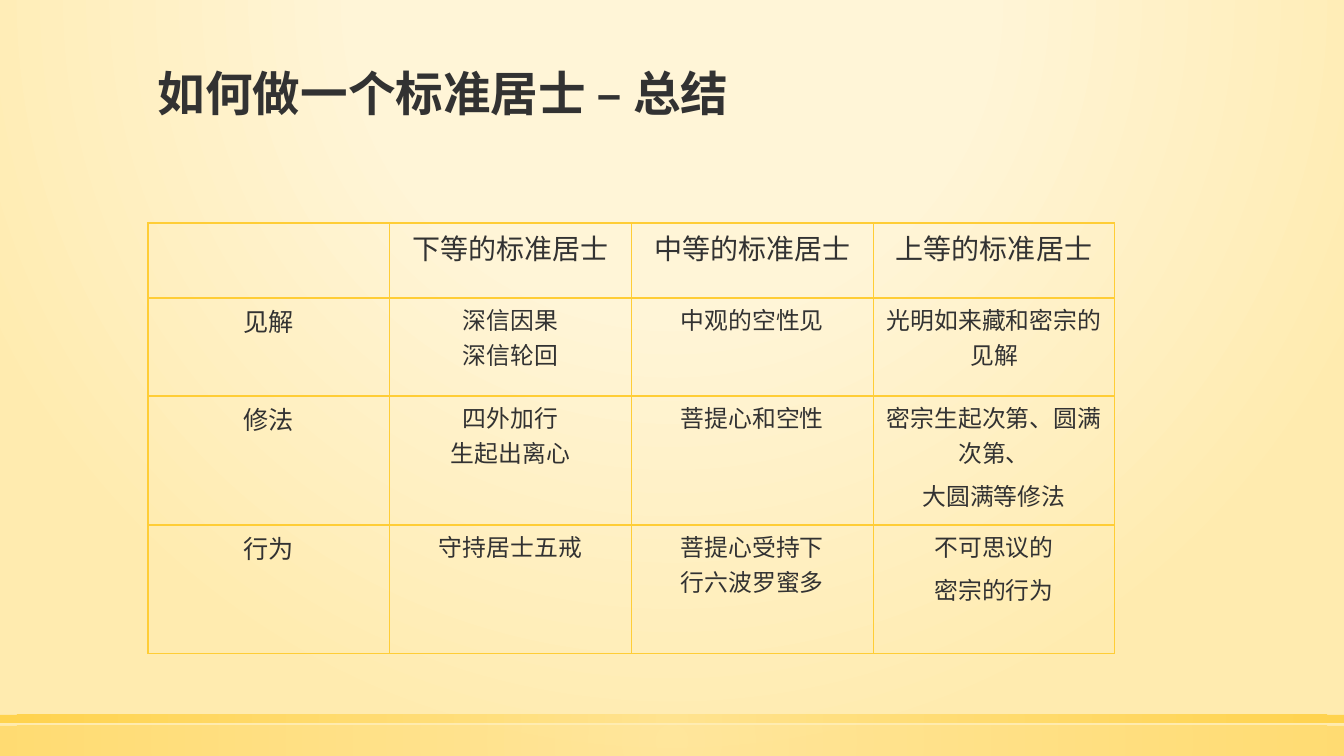
from lxml import etree
from pptx import Presentation
from pptx.dml.color import RGBColor
from pptx.enum.shapes import MSO_SHAPE
from pptx.enum.text import MSO_ANCHOR, PP_ALIGN
from pptx.oxml import parse_xml
from pptx.oxml.ns import nsdecls, qn
from pptx.util import Pt

RECT = MSO_SHAPE.RECTANGLE
BOTTOM = MSO_ANCHOR.BOTTOM
CENTER = PP_ALIGN.CENTER
PX = 914400 / 100.8
WIDE, HIGH = 1344, 756
FONT = "Noto Sans CJK SC"
COLORS = {
    "text": "323232",
    "gold": "FFCD36",
    "light": "FFE186",
    "cream": "FFF5D7",
    "sand": "FFEBAF",
}
ROWS = [
    ["", "下等的标准居士", "中等的标准居士", "上等的标准居士"],
    ["见解", "深信因果\n深信轮回", "中观的空性见", "光明如来藏和密宗的见解"],
    ["修法", "四外加行\n生起出离心", "菩提心和空性", "密宗生起次第、圆满次第、\n大圆满等修法"],
    ["行为", "守持居士五戒", "菩提心受持下\n行六波罗蜜多", "不可思议的\n密宗的行为"],
]
HEIGHTS = [75, 98, 129, 129]


def px(n):
    return round(n * PX)


class Deck:
    def __init__(self):
        self.prs = Presentation()
        self.prs.slide_width, self.prs.slide_height = px(WIDE), px(HIGH)
        self.slide = self.prs.slides.add_slide(self.prs.slide_layouts[6])

    def glow(self, item, stops, focus):
        """Swap the solid fill of a slide or shape for a round gradient."""
        marks = "".join(
            f'<a:gs pos="{pos * 1000}"><a:srgbClr val="{COLORS[name]}">'
            f'<a:alpha val="{alpha * 1000}"/></a:srgbClr></a:gs>'
            for pos, name, alpha in stops)
        edges = " ".join(f'{side}="{n * 1000}"' for side, n in zip("ltrb", focus))
        grad = parse_xml(
            f'<a:gradFill {nsdecls("a")} rotWithShape="1"><a:gsLst>{marks}</a:gsLst>'
            f'<a:path path="circle"><a:fillToRect {edges}/></a:path></a:gradFill>')
        solid = item._element.xpath(".//a:solidFill")[0]
        solid.getparent().replace(solid, grad)

    def back(self):
        self.slide.background.fill.solid()
        stops = [(0, "cream", 100), (40, "cream", 100), (100, "sand", 100)]
        self.glow(self.slide, stops, (50, -80, 50, 180))

    def bar(self, top, height, alpha):
        shape = self.slide.shapes.add_shape(RECT, 0, px(top), px(WIDE), px(height))
        shape.shadow.inherit = False
        shape.fill.solid()
        shape.line.fill.background()
        self.glow(shape, [(0, "light", alpha), (100, "gold", alpha)], (50,) * 4)

    def style(self, par, size, bold=False):
        for run in par.runs:
            font = run.font
            font.name, font.size, font.bold = FONT, Pt(size), bold
            font.color.rgb = RGBColor.from_string(COLORS["text"])
            etree.SubElement(run._r.get_or_add_rPr(), qn("a:ea"), typeface=FONT)

    def title(self, text, *box):
        frame = self.slide.shapes.add_textbox(*map(px, box)).text_frame
        frame.word_wrap = True
        frame.vertical_anchor = BOTTOM
        frame.text = text
        par = frame.paragraphs[0]
        par.line_spacing = 0.9
        self.style(par, 34, True)

    def edge(self, cell):
        """Draw the four cell borders, which precede the fill in the XML."""
        props = cell._tc.get_or_add_tcPr()
        for spot, side in enumerate("LRTB"):
            props.insert(spot, parse_xml(
                f'<a:ln{side} {nsdecls("a")} w="12700"><a:solidFill>'
                f'<a:srgbClr val="{COLORS["gold"]}"/></a:solidFill></a:ln{side}>'))

    def cell(self, cell, text, size, after):
        cell.fill.background()
        self.edge(cell)
        cell.margin_left = cell.margin_right = px(4)
        cell.margin_top = cell.margin_bottom = px(4)
        cell.text_frame.text = text
        for par in cell.text_frame.paragraphs:
            par.alignment = CENTER
            par.space_after = Pt(after)
            self.style(par, size)

    def table(self, rows, heights, left, top, width):
        cols = len(rows[0])
        table = self.slide.shapes.add_table(
            len(rows), cols, px(left), px(top), px(width), px(sum(heights))).table
        table.first_row = table.horz_banding = False
        for r, (row, height) in enumerate(zip(rows, heights)):
            table.rows[r].height = px(height)
            for c, text in enumerate(row):
                size = 20 if r == 0 else 18 if c == 0 else 17
                after = 6 if r == 0 or c == cols - 1 else 0
                self.cell(table.cell(r, c), text, size, after)


def main():
    deck = Deck()
    deck.back()
    deck.bar(726, 30, 50)
    deck.bar(715, 8, 80)
    deck.title("如何做一个标准居士 – 总结", 148, 51, 1048, 76)
    deck.table(ROWS, HEIGHTS, 148, 223, 967)
    deck.prs.save("out.pptx")


if __name__ == "__main__":
    main()
